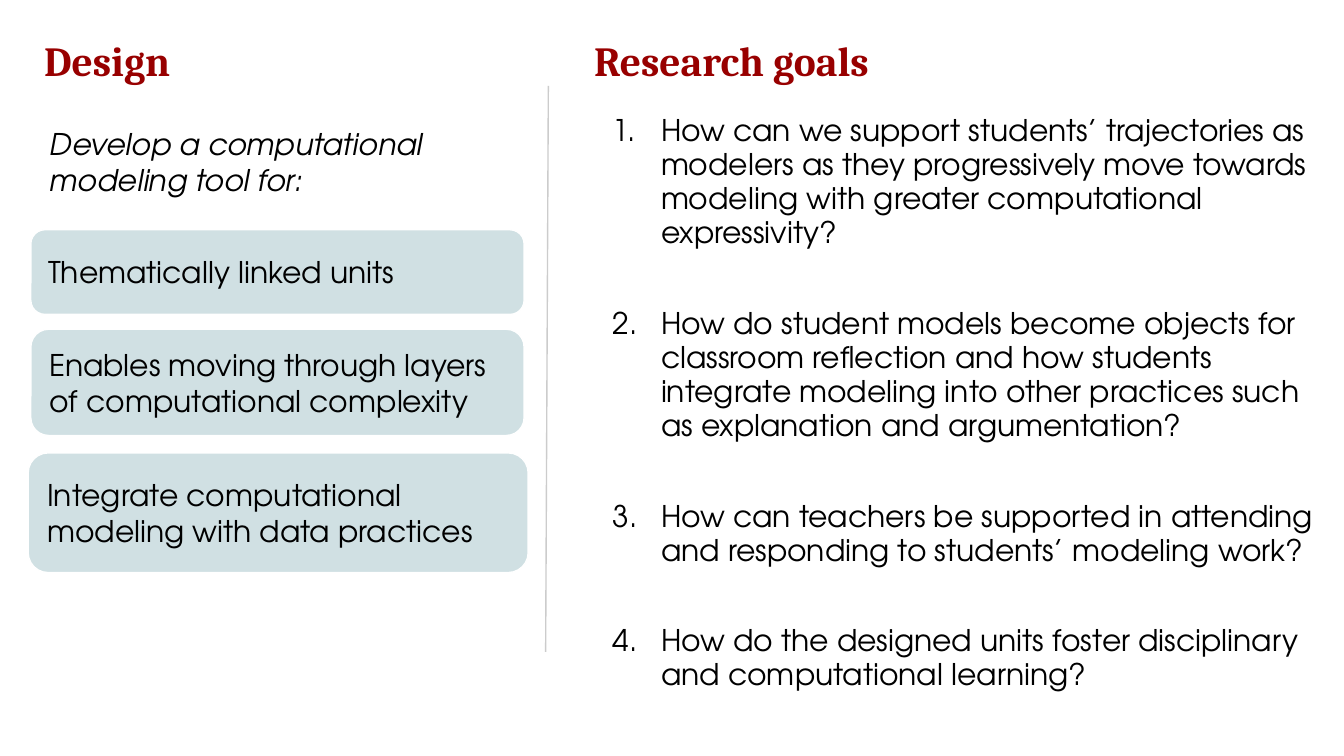
from dataclasses import dataclass

from lxml.etree import SubElement
from pptx import Presentation
from pptx.dml.color import RGBColor as Rgb
from pptx.enum.shapes import MSO_CONNECTOR as Connector, MSO_SHAPE as Preset
from pptx.enum.text import MSO_ANCHOR as Anchor, MSO_AUTO_SIZE as AutoSize, PP_ALIGN as Align
from pptx.oxml.ns import qn
from pptx.shapes.base import BaseShape
from pptx.slide import Slide
from pptx.text.text import TextFrame, _Paragraph as Paragraph
from pptx.util import Inches, Pt


@dataclass(frozen=True)
class Theme:
    heading_font: str = "Cambria"
    body_font: str = "TeX Gyre Adventor"
    heading_size: float = 22.2
    body_size: float = 16
    heading: Rgb = Rgb(0x98, 0x00, 0x00)
    body: Rgb = Rgb(0x00, 0x00, 0x00)
    card: Rgb = Rgb(0xD0, 0xE0, 0xE3)
    card_edge: Rgb = Rgb(0xFF, 0xFF, 0xFF)
    divider: Rgb = Rgb(0xCC, 0xCC, 0xCC)
    line_width: float = 0.75
    goal_gap: float = 30.4


@dataclass(frozen=True)
class Box:
    left: float
    top: float
    width: float
    height: float

    def emu(self) -> tuple[Inches, ...]:
        return tuple(Inches(n) for n in (self.left, self.top, self.width, self.height))


@dataclass(frozen=True)
class Card:
    text: str
    box: Box
    is_intro: bool = False


THEME = Theme()
SLIDE_WIDTH = 10
SLIDE_HEIGHT = SLIDE_WIDTH * 9 / 16
RESEARCH_BOX = Box(4.32, 0.16, 2.93, 0.63)
DESIGN_BOX = Box(0.23, 0.16, 1.45, 0.63)
GOALS_BOX = Box(4.32, 0.75, 5.59, 4.54)

CARDS = (
    Card("Enables moving through layers of computational complexity", Box(0.23, 2.45, 3.67, 0.79)),
    Card("Thematically linked units", Box(0.23, 1.71, 3.67, 0.63)),
    Card("Integrate computational modeling with data practices", Box(0.21, 3.37, 3.72, 0.89)),
    Card("Develop a computational modeling tool for:", Box(0.23, 0.76, 3.88, 0.89), is_intro=True),
)

GOALS = (
    "How can we support students’ trajectories as modelers as they progressively move "
    "towards modeling with greater computational expressivity?",
    "How do student models become objects for classroom reflection and how students "
    "integrate modeling into other practices such as explanation and argumentation?",
    "How can teachers be supported in attending and responding to students’ modeling work?",
    "How do the designed units foster disciplinary and computational learning?",
)


def prepare_frame(frame: TextFrame, anchor: Anchor = Anchor.TOP) -> None:
    frame.word_wrap = True
    frame.auto_size = AutoSize.NONE
    frame.vertical_anchor = anchor
    frame.margin_left = frame.margin_right = Inches(0.1)
    frame.margin_top = frame.margin_bottom = Inches(0.1)


def add_body_run(paragraph: Paragraph, text: str, italic: bool = False) -> None:
    paragraph.alignment = Align.LEFT
    run = paragraph.add_run()
    run.text = text
    run.font.name = THEME.body_font
    run.font.size = Pt(THEME.body_size)
    run.font.color.rgb = THEME.body
    run.font.italic = italic


def write_heading(holder: BaseShape, text: str, box: Box) -> None:
    holder.left, holder.top, holder.width, holder.height = box.emu()
    prepare_frame(holder.text_frame)
    paragraph = holder.text_frame.paragraphs[0]
    paragraph.alignment = Align.LEFT
    run = paragraph.add_run()
    run.text = text
    run.font.name = THEME.heading_font
    run.font.size = Pt(THEME.heading_size)
    run.font.bold = True
    run.font.color.rgb = THEME.heading


def add_divider(slide: Slide) -> None:
    divider = slide.shapes.add_connector(
        Connector.STRAIGHT, Inches(4.08), Inches(0.64), Inches(4.06), Inches(4.85)
    )
    divider.line.color.rgb = THEME.divider
    divider.line.width = Pt(THEME.line_width)
    SubElement(divider.element.spPr, qn("a:effectLst"))


def add_card(slide: Slide, card: Card) -> None:
    panel = slide.shapes.add_shape(Preset.ROUNDED_RECTANGLE, *card.box.emu())
    panel.shadow.inherit = False
    if card.is_intro:
        panel.fill.background()
        panel.line.fill.background()
    else:
        panel.fill.solid()
        panel.fill.fore_color.rgb = THEME.card
        panel.line.color.rgb = THEME.card_edge
        panel.line.width = Pt(THEME.line_width)
    prepare_frame(panel.text_frame, Anchor.MIDDLE)
    add_body_run(panel.text_frame.paragraphs[0], card.text, card.is_intro)


def number_paragraph(paragraph: Paragraph) -> None:
    properties = paragraph._p.get_or_add_pPr()
    properties.set("marL", str(Inches(0.5)))
    properties.set("indent", str(Inches(-0.36)))
    color = SubElement(properties, qn("a:buClr"))
    SubElement(color, qn("a:srgbClr"), val=str(THEME.body))
    SubElement(properties, qn("a:buFont"), typeface=THEME.body_font)
    SubElement(properties, qn("a:buAutoNum"), type="arabicPeriod")


def add_goals(slide: Slide) -> None:
    frame = slide.shapes.add_textbox(*GOALS_BOX.emu()).text_frame
    prepare_frame(frame)
    for index, goal in enumerate(GOALS):
        paragraph = frame.add_paragraph() if index else frame.paragraphs[0]
        number_paragraph(paragraph)
        paragraph.line_spacing = 0.95
        if index:
            paragraph.space_before = Pt(THEME.goal_gap)
        add_body_run(paragraph, goal)


def main() -> None:
    deck = Presentation()
    deck.slide_width, deck.slide_height = Inches(SLIDE_WIDTH), Inches(SLIDE_HEIGHT)
    slide = deck.slides.add_slide(deck.slide_layouts[5])
    write_heading(slide.shapes.title, "Research goals", RESEARCH_BOX)
    write_heading(slide.shapes.add_textbox(*DESIGN_BOX.emu()), "Design", DESIGN_BOX)
    add_divider(slide)
    for card in CARDS:
        add_card(slide, card)
    add_goals(slide)
    deck.save("out.pptx")


if __name__ == "__main__":
    main()
